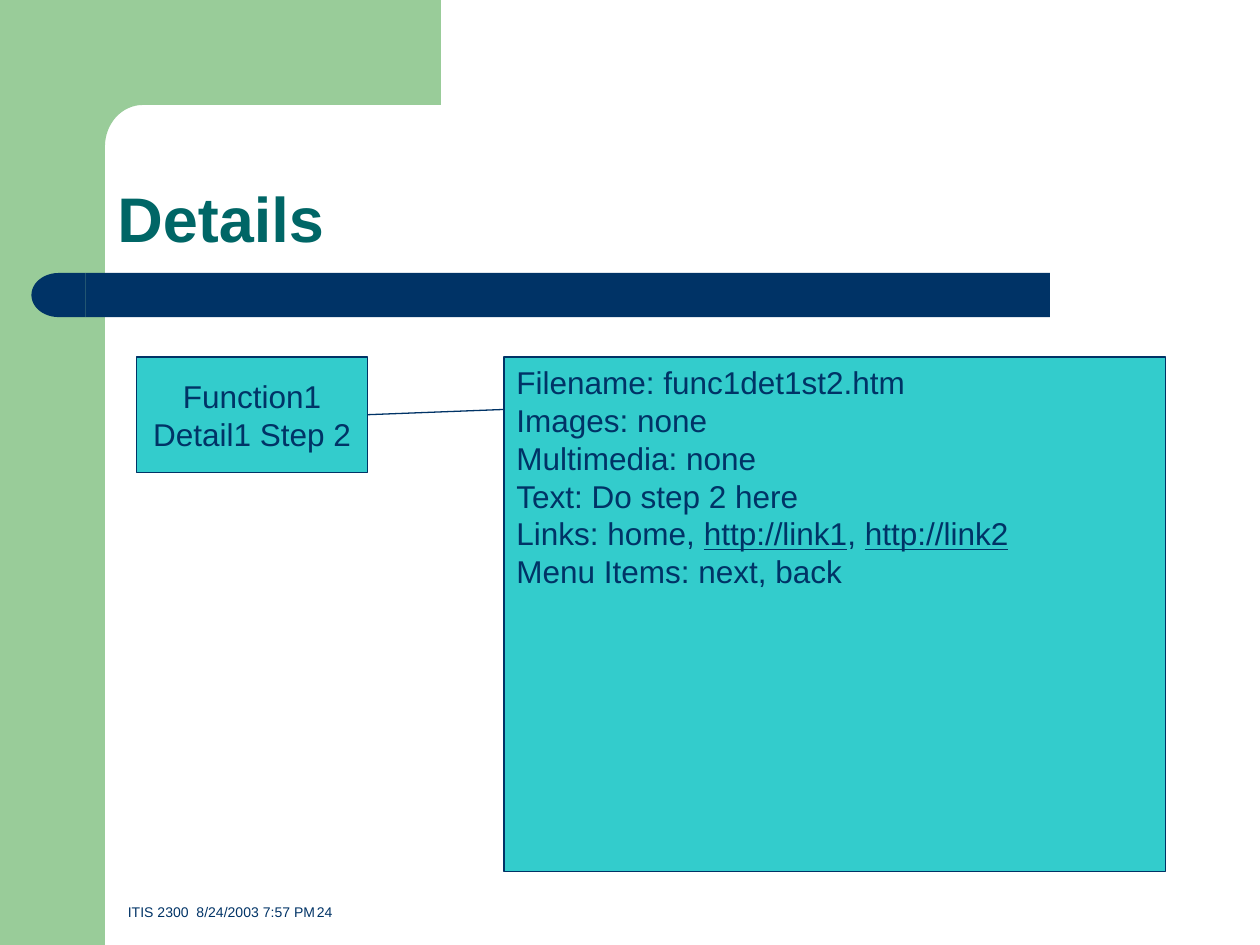
from math import cos, sin, pi
from lxml.etree import SubElement
from pptx import Presentation
from pptx.dml.color import RGBColor
from pptx.enum.shapes import MSO_CONNECTOR, MSO_SHAPE as Shape
from pptx.enum.text import MSO_ANCHOR as Anchor, PP_ALIGN as Align
from pptx.oxml.ns import qn
from pptx.util import Inches, Pt

GREEN = RGBColor(0x99, 0xCC, 0x99)
NAVY = RGBColor(0x00, 0x33, 0x66)
TEAL = RGBColor(0x00, 0x66, 0x66)
AQUA = RGBColor(0x33, 0xCC, 0xCC)
WIDE, HIGH = 10, 7.5
COL, ROW = WIDE / 120, HIGH / 90  # grid of twelfths of an inch

DETAILS = [
    ["Filename: func1det1st2.htm"],
    ["Images: none"],
    ["Multimedia: none"],
    ["Text: Do step 2 here"],
    ["Links: home, ", "http://link1", ", ", "http://link2"],
    ["Menu Items: next, back"],
]


def grid(left, top, wide, high):
    """Turn columns and rows into a box in EMU."""
    return [Inches(n * unit) for n, unit in
            zip((left, top, wide, high), (COL, ROW, COL, ROW))]


def paint(shape, fill, line=None):
    shape.shadow.inherit = False
    shape.fill.solid()
    shape.fill.fore_color.rgb = fill
    if line is None:
        shape.line.fill.background()
    else:
        shape.line.color.rgb = line
        shape.line.width = Pt(0.75)
    return shape


def write(shape, rows, size, color=NAVY, bold=False, align=Align.LEFT,
          anchor=Anchor.TOP, wrap=True, space=None):
    """Fill a shape with rows of runs; web links are underlined."""
    frame = shape.text_frame
    frame.word_wrap, frame.vertical_anchor = wrap, anchor
    for i, runs in enumerate(rows):
        para = frame.paragraphs[0] if i == 0 else frame.add_paragraph()
        para.alignment = align
        if space:
            para.line_spacing = space
        for text in runs:
            run = para.add_run()
            run.text = text
            look = {"name": "Arial", "size": Pt(size), "bold": bold,
                    "underline": text.startswith("http")}
            for key, value in look.items():
                setattr(run.font, key, value)
            run.font.color.rgb = color


def frame_band(slide, box):
    """Side band and top band joined by a rounded inner corner."""
    left, top, wide, high = box
    side, deep = 10 * COL, 10 * ROW
    paint(slide.shapes.add_shape(Shape.RECTANGLE, left, top,
                                 Inches(side), high), GREEN)
    rx, ry = 0.3, 0.33
    arc = [(side + rx * (1 - cos(t)), deep + ry * (1 - sin(t)))
           for t in (pi / 2 * (1 - i / 16) for i in range(17))]
    edge = [(wide / Inches(1), deep), *arc, (side, 1.28),
            (0.5, 1.28), (0.5, 0)]
    pen = slide.shapes.build_freeform(Inches(wide / Inches(1)), 0, scale=1.0)
    pen.add_line_segments([(Inches(x), Inches(y)) for x, y in edge])
    paint(pen.convert_to_shape(left, top), GREEN)


def title_bar(slide, box):
    """Navy bar with a round left end."""
    left, top, wide, high = box
    cap = Inches(0.43)
    paint(slide.shapes.add_shape(Shape.RECTANGLE, left + cap, top,
                                 wide - cap, high), NAVY)
    end = slide.shapes.add_shape(Shape.FLOWCHART_DELAY, left, top, cap, high)
    end._element.spPr.xfrm.set("flipH", "1")
    paint(end, NAVY)


def label(slide, box, text, size, **look):
    write(slide.shapes.add_textbox(*box), [[text]], size,
          anchor=Anchor.BOTTOM, **look)


def card(slide, box, rows, **look):
    shape = slide.shapes.add_shape(Shape.RECTANGLE, *box)
    write(paint(shape, AQUA, NAVY), rows, 18, **look)


def link(slide, start, end):
    line = slide.shapes.add_connector(MSO_CONNECTOR.STRAIGHT, *start, *end)
    line.line.color.rgb = NAVY
    line.line.width = Pt(0.75)
    SubElement(line._element.spPr, qn("a:effectLst"))


def main():
    deck = Presentation()
    deck.slide_width, deck.slide_height = Inches(WIDE), Inches(HIGH)
    slide = deck.slides.add_slide(deck.slide_layouts[6])

    # Background decoration
    frame_band(slide, grid(0, 0, 42, 90))
    title_bar(slide, grid(3, 26, 97, 4.2))

    # Footer and title
    label(slide, grid(11, 82, 103, 6.2),
          "ITIS 2300  8/24/2003 7:57 PM\t24", 8)
    label(slide, grid(10, 10, 104, 15), "Details", 36,
          color=TEAL, bold=True, space=0.9)

    # Step card joined to its details
    step, info = grid(13, 34, 22, 11), grid(48, 34, 63, 49)
    card(slide, step, [["Function1 Detail1 Step 2"]],
         align=Align.CENTER, anchor=Anchor.MIDDLE)
    card(slide, info, DETAILS, wrap=False)
    link(slide, (step[0] + step[2], step[1] + step[3] // 2),
         (info[0], info[1] + Inches(5 * ROW)))

    deck.save("out.pptx")


if __name__ == "__main__":
    main()
